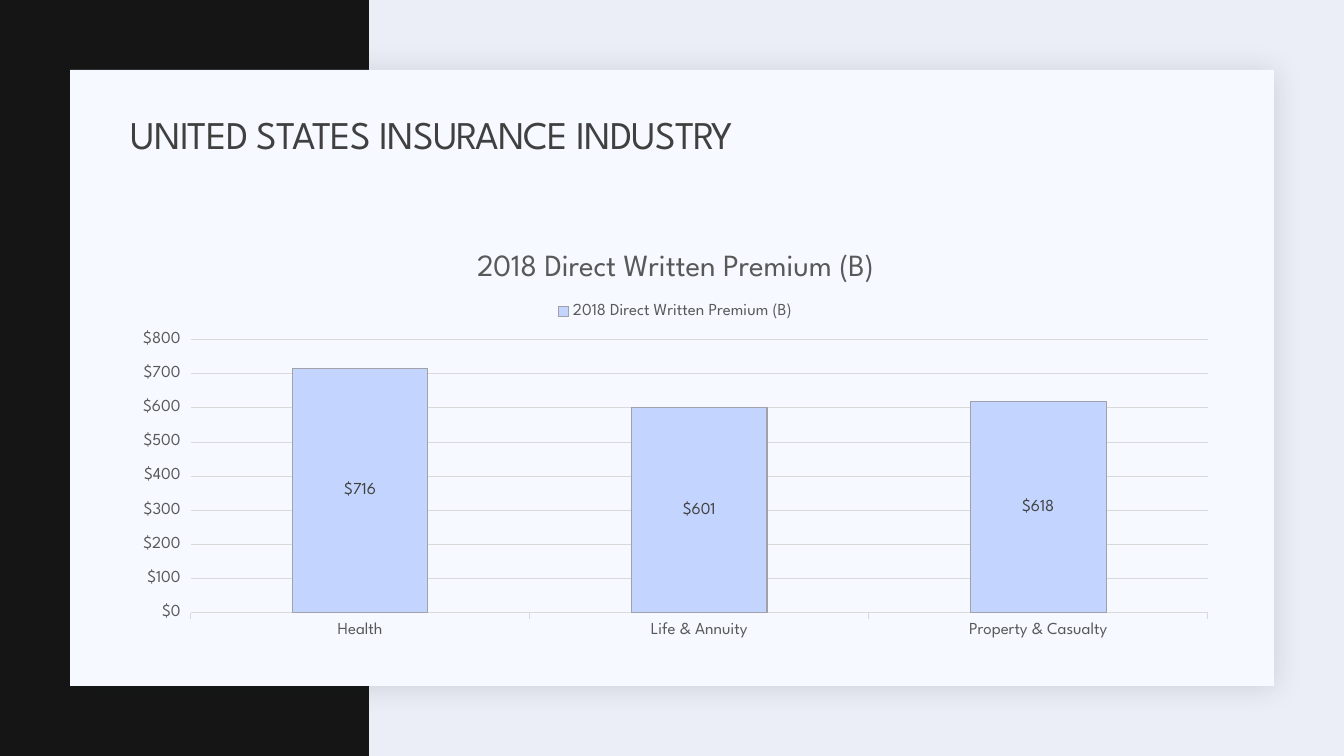
from lxml import etree
from pptx import Presentation
from pptx import util as u
from pptx.chart.data import CategoryChartData
from pptx.dml.color import RGBColor
from pptx.enum import chart as c
from pptx.enum import shapes, text
from pptx.oxml import parse_xml
from pptx.oxml.ns import nsdecls, qn

COLORS = {
    "background": "ECEEF7", "band": "141514", "card": "F6F9FF",
    "shadow": "1F2125", "bar": "C3D5FF", "outline": "A1A2A9",
    "grid": "D9D9D9", "label": "404040", "muted": "595959",
}
FONT = "League Spartan"
MONEY = '"$"#,##0'
TITLE = "UNITED STATES INSURANCE INDUSTRY"
SERIES = "2018 Direct Written Premium (B)"
PREMIUMS = {"Health": 716, "Life & Annuity": 601, "Property & Casualty": 618}

SIZE = (1344, 756)
PANELS = [("band", (0, 0, 369, 756)), ("card", (70, 70, 1204, 616))]
CHART_BOX = (121, 233, 1109, 414)
TITLE_BOX = (121, 104, 1109, 65)
EMU_PER_PX = 914400 / 100.8


def px(*lengths):
    return [u.Emu(round(length * EMU_PER_PX)) for length in lengths]


def rgb(name):
    return RGBColor.from_string(COLORS[name])


def set_all(target, values):
    for name, value in values.items():
        setattr(target, name, value)


def set_font(font, size, color):
    set_all(font, {"name": FONT, "size": u.Pt(size), "bold": False})
    font.color.rgb = rgb(color)


def set_fill(fill, color):
    fill.solid()
    fill.fore_color.rgb = rgb(color)


def set_line(line, color):
    line.color.rgb = rgb(color)
    line.width = u.Pt(0.75)


def add_panels(slide):
    for name, box in PANELS:
        shape = slide.shapes.add_shape(shapes.MSO_SHAPE.RECTANGLE, *px(*box))
        shape.shadow.inherit = False
        set_fill(shape.fill, name)
        shape.line.fill.background()
    effects = shape._element.spPr.find(qn("a:effectLst"))
    effects.append(parse_xml(
        f'<a:outerShdw {nsdecls("a")} blurRad="{u.Pt(20)}" dist="{u.Pt(2)}" '
        f'dir="2700000" algn="tl" rotWithShape="0">'
        f'<a:srgbClr val="{COLORS["shadow"]}"><a:alpha val="15000"/></a:srgbClr>'
        '</a:outerShdw>'))


def add_premium_chart(slide):
    data = CategoryChartData(number_format=MONEY)
    data.categories = list(PREMIUMS)
    data.add_series(SERIES, list(PREMIUMS.values()))
    chart = slide.shapes.add_chart(
        c.XL_CHART_TYPE.COLUMN_CLUSTERED, *px(*CHART_BOX), data).chart
    set_font(chart.font, 12, "muted")

    heading = chart.chart_title.text_frame
    heading.text = SERIES
    set_font(heading.paragraphs[0].runs[0].font, 22, "muted")
    chart.has_legend = True
    set_all(chart.legend, {"position": c.XL_LEGEND_POSITION.TOP,
                           "include_in_layout": False})
    set_font(chart.legend.font, 12, "muted")

    for axis in (chart.category_axis, chart.value_axis):
        axis.major_tick_mark = c.XL_TICK_MARK.OUTSIDE
        set_font(axis.tick_labels.font, 12, "muted")
    set_line(chart.category_axis.format.line, "grid")
    value_axis = chart.value_axis
    set_all(value_axis, {"minimum_scale": 0, "maximum_scale": 800,
                         "major_unit": 100, "has_major_gridlines": True})
    value_axis.format.line.fill.background()
    set_line(value_axis.major_gridlines.format.line, "grid")
    set_all(value_axis.tick_labels, {"number_format": MONEY,
                                     "number_format_is_linked": False})

    plot = chart.plots[0]
    set_all(plot, {"gap_width": 150, "vary_by_categories": False})
    series = plot.series[0]
    set_fill(series.format.fill, "bar")
    set_line(series.format.line, "outline")
    labels = series.data_labels
    set_all(labels, {"show_value": True, "number_format": MONEY,
                     "number_format_is_linked": False,
                     "position": c.XL_LABEL_POSITION.CENTER})
    set_font(labels.font, 12, "label")


def add_title(slide):
    frame = slide.shapes.add_textbox(*px(*TITLE_BOX)).text_frame
    set_all(frame, {"word_wrap": True,
                    "vertical_anchor": text.MSO_ANCHOR.MIDDLE})
    paragraph = frame.paragraphs[0]
    paragraph.line_spacing = 0.9
    run = paragraph.add_run()
    run.text = TITLE
    set_font(run.font, 28, "label")
    run._r.get_or_add_rPr().set("spc", "-50")


def main():
    presentation = Presentation()
    presentation.slide_width, presentation.slide_height = px(*SIZE)
    slide = presentation.slides.add_slide(presentation.slide_layouts[6])
    set_fill(slide.background.fill, "background")
    add_panels(slide)
    add_premium_chart(slide)
    add_title(slide)
    presentation.save("out.pptx")


if __name__ == "__main__":
    main()
